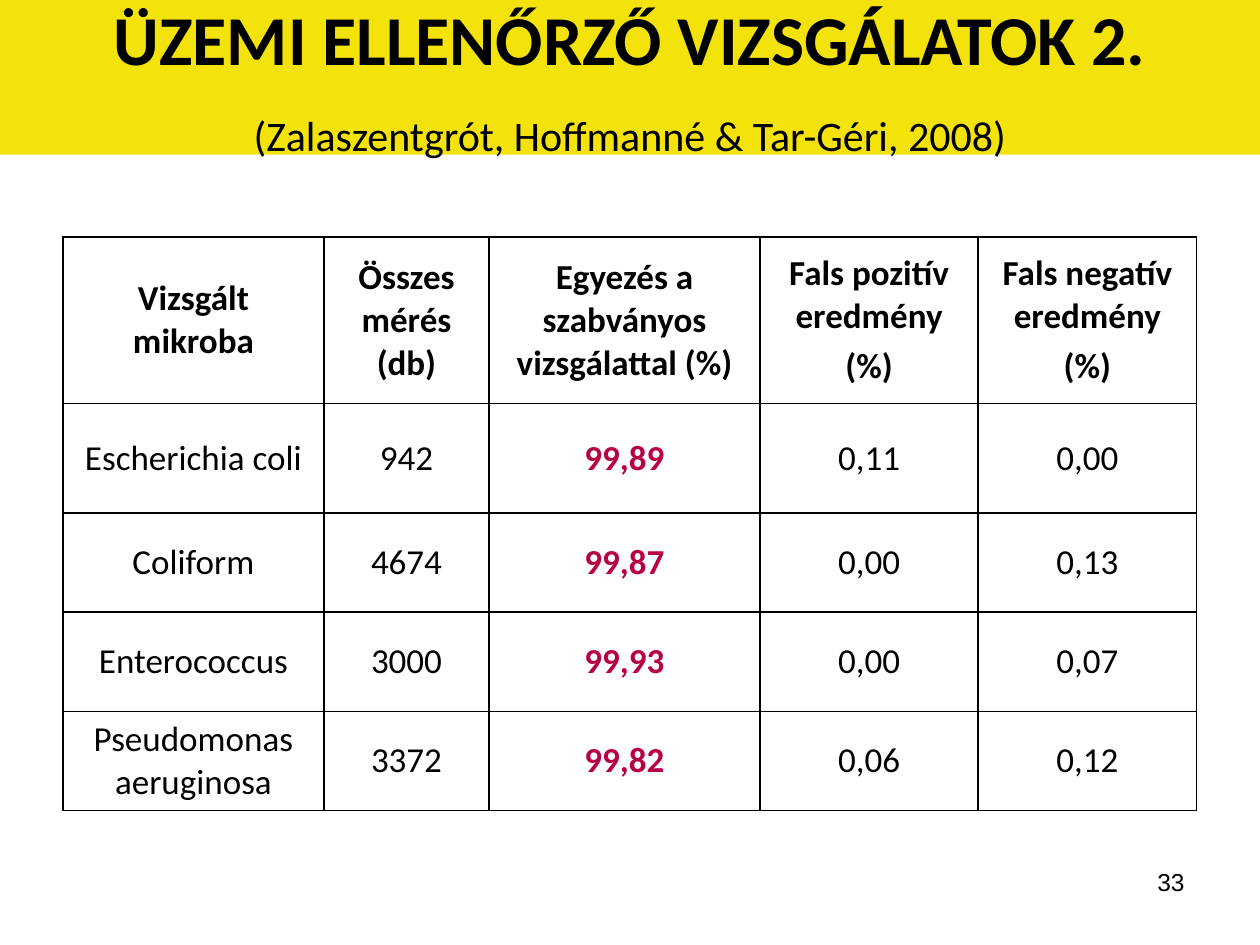
from dataclasses import dataclass

from pptx import Presentation
from pptx.dml.color import RGBColor
from pptx.enum.text import MSO_ANCHOR, MSO_AUTO_SIZE, PP_ALIGN
from pptx.oxml import parse_xml
from pptx.oxml.ns import nsdecls
from pptx.util import Cm, Pt

CENTER, RIGHT = PP_ALIGN.CENTER, PP_ALIGN.RIGHT
MIDDLE = MSO_ANCHOR.MIDDLE
NO_AUTOFIT = MSO_AUTO_SIZE.NONE
TITLE_ONLY_LAYOUT = 5


@dataclass(frozen=True)
class Theme:
    text: RGBColor = RGBColor(0x00, 0x00, 0x00)
    band: RGBColor = RGBColor(0xF4, 0xE3, 0x0A)
    header: RGBColor = RGBColor(0xFF, 0xFF, 0xFF)
    accent: RGBColor = RGBColor(0xB8, 0x00, 0x47)
    font: str = "Calibri"
    number_font: str = "Arial"
    title_size: Pt = Pt(40)
    source_size: Pt = Pt(24)
    table_size: Pt = Pt(20)
    number_size: Pt = Pt(14)
    border_width: Pt = Pt(1)


theme = Theme()


def format_paragraph(paragraph, size, bold=False, color=theme.text,
                     name=theme.font, alignment=CENTER):
    paragraph.alignment = alignment
    for run in paragraph.runs:
        run.font.size = size
        run.font.bold = bold
        run.font.color.rgb = color
        run.font.name = name


def add_borders(cell):
    properties = cell._tc.get_or_add_tcPr()
    for side in ("lnL", "lnR", "lnT", "lnB"):
        properties.append(parse_xml(
            f'<a:{side} {nsdecls("a")} w="{theme.border_width}"><a:solidFill>'
            f'<a:srgbClr val="{theme.text}"/></a:solidFill></a:{side}>'))


presentation = Presentation()
presentation.slide_width = Cm(25.4)
presentation.slide_height = Cm(19.05)
slide = presentation.slides.add_slide(presentation.slide_layouts[TITLE_ONLY_LAYOUT])

# Title band
title = slide.shapes.title
title.left, title.top, title.width, title.height = Cm(0), Cm(0), Cm(25.4), Cm(3.12)
title.fill.solid()
title.fill.fore_color.rgb = theme.band
title_frame = title.text_frame
title_frame.text = ("ÜZEMI ELLENŐRZŐ VIZSGÁLATOK 2.\n"
                    "(Zalaszentgrót, Hoffmanné & Tar-Géri, 2008)")
title_frame.auto_size = NO_AUTOFIT
title_frame.vertical_anchor = MIDDLE
heading, source = title_frame.paragraphs
format_paragraph(heading, theme.title_size, bold=True)
format_paragraph(source, theme.source_size)
source.space_before = Pt(17)

# Results table
rows = [
    ("Vizsgált mikroba", "Összes mérés (db)", "Egyezés a szabványos vizsgálattal (%)",
     "Fals pozitív eredmény\n(%)", "Fals negatív eredmény\n(%)"),
    ("Escherichia coli", "942", "99,89", "0,11", "0,00"),
    ("Coliform", "4674", "99,87", "0,00", "0,13"),
    ("Enterococcus", "3000", "99,93", "0,00", "0,07"),
    ("Pseudomonas aeruginosa", "3372", "99,82", "0,06", "0,12"),
]
column_widths = (5.26, 3.33, 5.46, 4.4, 4.4)
row_heights = (3.35, 2.21, 2, 2, 2)
agreement_column = 2

table = slide.shapes.add_table(
    len(rows), len(column_widths), Cm(1.27), Cm(4.78),
    Cm(sum(column_widths)), Cm(sum(row_heights))).table
table.first_row = False
table.horz_banding = False
for column, width in zip(table.columns, column_widths):
    column.width = Cm(width)

for row_index, (row, height) in enumerate(zip(rows, row_heights)):
    table.rows[row_index].height = Cm(height)
    is_header = row_index == 0
    for column_index, text in enumerate(row):
        cell = table.cell(row_index, column_index)
        cell.text_frame.text = text
        cell.vertical_anchor = MIDDLE
        add_borders(cell)
        if is_header:
            cell.fill.solid()
            cell.fill.fore_color.rgb = theme.header
        else:
            cell.fill.background()
        is_agreement = column_index == agreement_column
        color = theme.accent if is_agreement and not is_header else theme.text
        for paragraph in cell.text_frame.paragraphs:
            format_paragraph(paragraph, theme.table_size, is_header or is_agreement, color)
        for paragraph in cell.text_frame.paragraphs[1:]:
            paragraph.space_before = Pt(4)

# Slide number
number_box = slide.shapes.add_textbox(Cm(18.2), Cm(17.35), Cm(5.93), Cm(1.32))
number_box.text_frame.word_wrap = True
number_box.text_frame.text = "33"
format_paragraph(number_box.text_frame.paragraphs[0], theme.number_size,
                 name=theme.number_font, alignment=RIGHT)

presentation.save("out.pptx")
